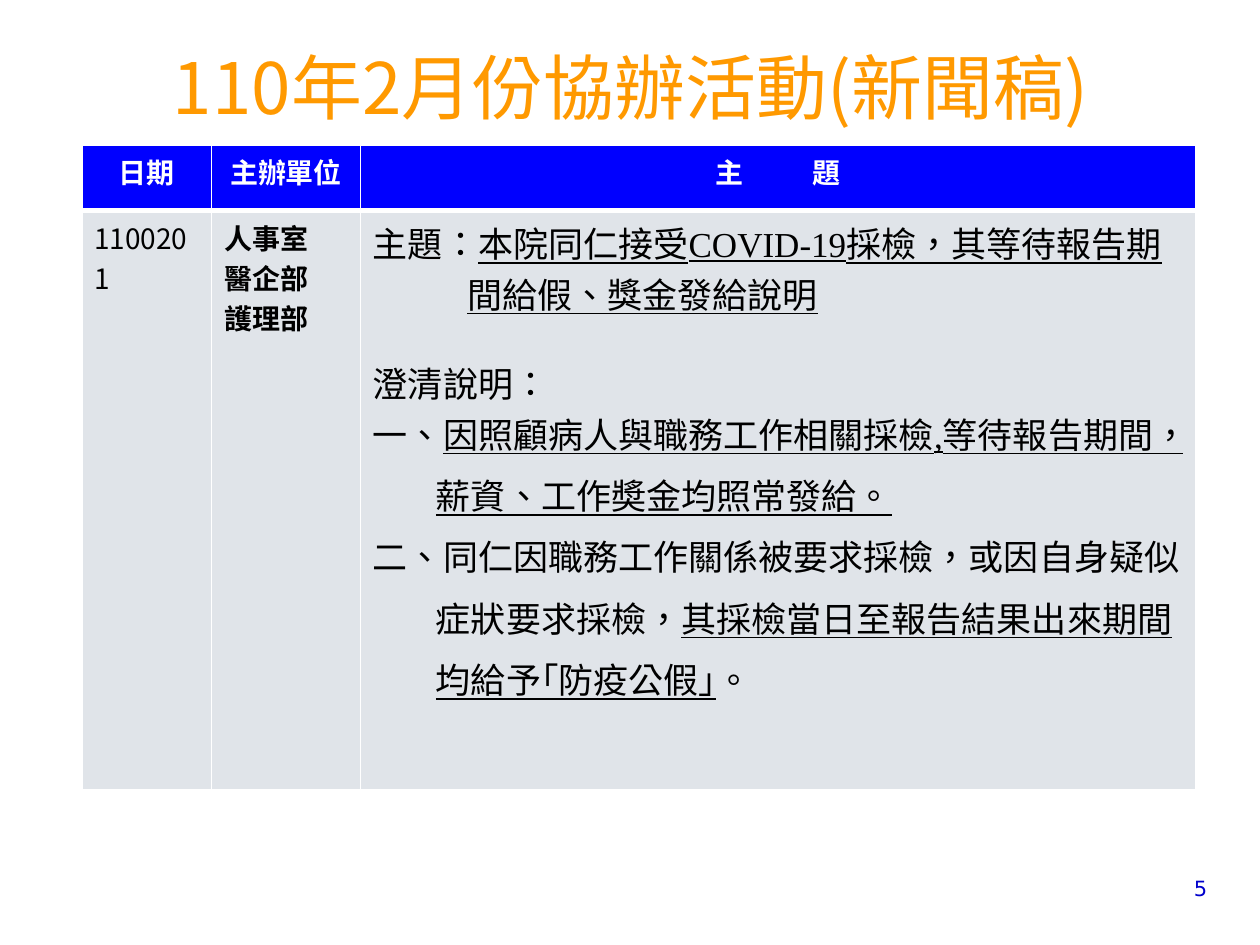
from dataclasses import dataclass
from typing import NamedTuple

from pptx import Presentation
from pptx.dml.color import RGBColor
from pptx.enum.text import MSO_ANCHOR, PP_ALIGN
from pptx.oxml.xmlchemy import OxmlElement
from pptx.util import Inches, Pt


@dataclass(frozen=True)
class Theme:
    sans: str = "Noto Sans CJK SC"
    serif: str = "Times New Roman"
    number: str = "DejaVu Sans"
    title: str = "FF9900"
    header: str = "0000FF"
    body: str = "E0E4E9"
    white: str = "FFFFFF"
    black: str = "000000"
    page: str = "0000CC"
    title_pt: float = 40.5
    cell_pt: float = 16
    topic_pt: float = 20
    page_pt: float = 12


class Span(NamedTuple):
    text: str
    underline: bool = False


class Line(NamedTuple):
    spans: list[Span]
    indent: float = 0
    before: float = 0


THEME = Theme()
COLUMNS = [1.03, 1.18, 6.63]
ROWS = [0.52, 4.6]
TOPIC_INDENT, ITEM_INDENT = 0.75, 0.5
SECTION_GAP, ITEM_GAP = 22, 6
HEADER_GAP = 3600  # letter spacing in hundredths of a point

TOPIC = [
    Line([Span("主題："), Span("本院同仁接受COVID-19採檢，其等待報告期", True)]),
    Line([Span("間給假、獎金發給說明", True)], TOPIC_INDENT),
    Line([Span("澄清說明：")], before=SECTION_GAP),
    Line([Span("一、"), Span("因照顧病人與職務工作相關採檢,等待報告期間，", True)]),
    Line([Span("薪資、工作奬金均照常發給。", True)], ITEM_INDENT, ITEM_GAP),
    Line([Span("二、同仁因職務工作關係被要求採檢，或因自身疑似")], before=ITEM_GAP),
    Line([Span("症狀要求採檢，"), Span("其採檢當日至報告結果出來期間", True)],
         ITEM_INDENT, ITEM_GAP),
    Line([Span("均給予｢防疫公假｣", True), Span("。")], ITEM_INDENT, ITEM_GAP),
]


def style(font, name: str, size: float, color: str, bold: bool = False) -> None:
    """Format a font, with Traditional Chinese glyphs for East Asian text."""
    font.name, font.size, font.bold = name, Pt(size), bold
    font.color.rgb = RGBColor.from_string(color)
    rPr = font._rPr
    rPr.set("lang", "zh-TW")
    ea = OxmlElement("a:ea")
    ea.set("typeface", THEME.sans)
    rPr.find(ea.tag.replace("}ea", "}latin")).addnext(ea)


def write_lines(tf, lines: list[Line], name: str, size: float, color: str,
                bold: bool = False, align=PP_ALIGN.LEFT) -> None:
    for i, line in enumerate(lines):
        p = tf.add_paragraph() if i else tf.paragraphs[0]
        p.alignment = align
        p.space_before = Pt(line.before)
        pPr = p._p.get_or_add_pPr()
        pPr.set("marL", str(Inches(line.indent)))
        pPr.set("indent", "0")
        style(p.font, name, size, color, bold)
        for span in line.spans:
            r = p.add_run()
            r.text = span.text
            if span.underline:
                r.font.underline = True


def plain(*texts: str) -> list[Line]:
    return [Line([Span(text)]) for text in texts]


def format_cell(cell, fill: str, bottom: float) -> None:
    """Fill the cell and give it white borders, 1 pt except at the bottom."""
    tcPr = cell._tc.get_or_add_tcPr()
    for tag, width in (("lnL", 1), ("lnR", 1), ("lnT", 1), ("lnB", bottom)):
        ln = OxmlElement(f"a:{tag}")
        ln.set("w", str(Pt(width)))
        solid, clr = OxmlElement("a:solidFill"), OxmlElement("a:srgbClr")
        clr.set("val", THEME.white)
        solid.append(clr)
        ln.append(solid)
        tcPr.append(ln)
    cell.fill.solid()
    cell.fill.fore_color.rgb = RGBColor.from_string(fill)


def add_title(slide) -> None:
    sp = slide.shapes.title
    sp.left, sp.top = Inches(0.63), Inches(0.34)
    sp.width, sp.height = Inches(8.75), Inches(0.73)
    tf = sp.text_frame
    tf.vertical_anchor = MSO_ANCHOR.BOTTOM
    write_lines(tf, plain("110年2月份協辦活動(新聞稿)"), THEME.sans,
                THEME.title_pt, THEME.title, align=PP_ALIGN.CENTER)


def add_activity_table(slide) -> None:
    table = slide.shapes.add_table(
        len(ROWS), len(COLUMNS), Inches(0.65), Inches(1.15),
        Inches(sum(COLUMNS)), Inches(sum(ROWS))).table
    for col, width in zip(table.columns, COLUMNS):
        col.width = Inches(width)
    for row, height in zip(table.rows, ROWS):
        row.height = Inches(height)

    subject = [Line([Span("主"), Span(" "), Span("題")])]
    for i, lines in enumerate([plain("日期"), plain("主辦單位"), subject]):
        cell = table.cell(0, i)
        format_cell(cell, THEME.header, 3)
        write_lines(cell.text_frame, lines, THEME.sans, THEME.cell_pt,
                    THEME.white, True, PP_ALIGN.CENTER)
    gap = table.cell(0, 2).text_frame.paragraphs[0].runs[1]
    gap.font._rPr.set("spc", str(HEADER_GAP))

    body = [
        (plain("1100201"), THEME.sans, THEME.cell_pt, False),
        (plain("人事室", "醫企部", "護理部"), THEME.sans, THEME.cell_pt, True),
        (TOPIC, THEME.serif, THEME.topic_pt, False),
    ]
    for i, (lines, name, size, bold) in enumerate(body):
        cell = table.cell(1, i)
        format_cell(cell, THEME.body, 1)
        write_lines(cell.text_frame, lines, name, size, THEME.black, bold)


def add_page_number(slide) -> None:
    sp = slide.shapes.add_textbox(Inches(8.94), Inches(6.9), Inches(0.74), Inches(0.3))
    sp.text_frame.word_wrap = True
    write_lines(sp.text_frame, plain("5"), THEME.number, THEME.page_pt,
                THEME.page, align=PP_ALIGN.RIGHT)


def main() -> None:
    prs = Presentation()
    prs.slide_width, prs.slide_height = Inches(10), Inches(7.5)
    slide = prs.slides.add_slide(prs.slide_layouts[5])
    add_title(slide)
    add_activity_table(slide)
    add_page_number(slide)
    prs.save("out.pptx")


if __name__ == "__main__":
    main()
